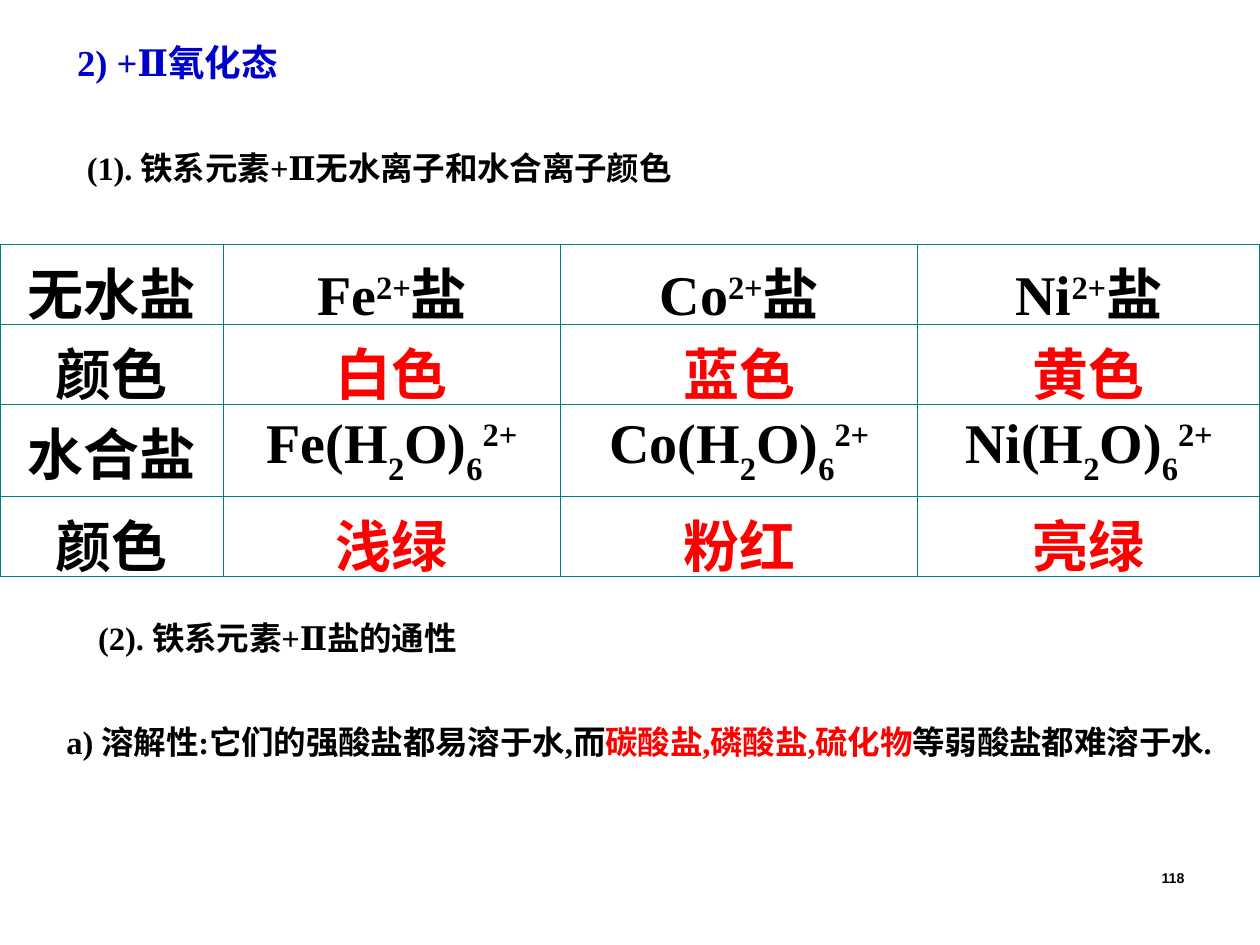
from typing import NamedTuple

from lxml.etree import SubElement
from pptx import Presentation
from pptx.dml.color import RGBColor
from pptx.enum.text import MSO_ANCHOR, MSO_AUTO_SIZE, PP_ALIGN
from pptx.oxml import parse_xml
from pptx.oxml.ns import nsdecls, qn
from pptx.util import Cm, Pt

BLACK = RGBColor(0x00, 0x00, 0x00)
BLUE = RGBColor(0x00, 0x00, 0xCC)
RED = RGBColor(0xFF, 0x00, 0x00)
TEAL = RGBColor(0x00, 0x80, 0x80)
WHITE = RGBColor(0xFF, 0xFF, 0xFF)
SERIF = "Times New Roman"
RAISE = 30
METALS = ("Fe", "Co", "Ni")


class Span(NamedTuple):
    text: str
    color: RGBColor = BLACK
    base: int = 0


class Box(NamedTuple):
    left: float
    top: float
    width: float
    height: float


class Note(NamedTuple):
    box: Box
    spans: list[Span]
    size: int = 32
    font: str = SERIF
    align: PP_ALIGN = PP_ALIGN.LEFT
    anchor: MSO_ANCHOR = MSO_ANCHOR.MIDDLE
    fit: MSO_AUTO_SIZE = MSO_AUTO_SIZE.SHAPE_TO_FIT_TEXT
    space: float = 1.0


def raised(text: str, color: RGBColor = BLACK) -> Span:
    return Span(text, color, RAISE)


NOTES = [
    Note(Box(1.5, 2.72, 21.2, 1.6), [raised("(1). 铁系元素+Ⅱ无水离子和水合离子颜色")]),
    Note(Box(1.73, 12.19, 13.36, 1.63), [raised("(2). 铁系元素+Ⅱ盐的通性")]),
    Note(
        Box(1.09, 14.17, 23.7, 3.23),
        [
            raised("a) 溶解性:它们的强酸盐都易溶于水,而"),
            raised("碳酸盐,磷酸盐,硫化物", RED),
            raised("等弱酸盐都难溶于水."),
        ],
        anchor=MSO_ANCHOR.TOP,
        space=1.1,
    ),
    Note(
        Box(18.21, 17.35, 5.92, 1.32),
        [raised("118")],
        size=14,
        font="Arial",
        align=PP_ALIGN.RIGHT,
        anchor=MSO_ANCHOR.TOP,
        fit=MSO_AUTO_SIZE.NONE,
    ),
]
TITLE = Note(Box(1.3, 0.53, 10.41, 1.78), [raised("2) +Ⅱ氧化态", BLUE)], size=36)

GRID = Box(0, 4.93, 25.4, 6.43)
WIDTHS = (4.5, 6.8, 7.2, 6.9)


def salt(metal: str) -> list[Span]:
    return [Span(metal), raised("2+"), Span("盐")]


def hydrate(metal: str) -> list[Span]:
    return [
        Span(f"{metal}(H"),
        Span("2", base=-RAISE),
        Span("O)"),
        Span("6", base=-RAISE),
        raised("2+"),
    ]


def tints(*names: str) -> list[list[Span]]:
    return [[Span("颜色")]] + [[Span(name, RED)] for name in names]


ROWS = [
    [[Span("无水盐")]] + [salt(metal) for metal in METALS],
    tints("白色", "蓝色", "黄色"),
    [[Span("水合盐")]] + [hydrate(metal) for metal in METALS],
    tints("浅绿", "粉红", "亮绿"),
]


def write(para, spans: list[Span], size: int, font: str, align: PP_ALIGN) -> None:
    para.alignment = align
    for span in spans:
        run = para.add_run()
        run.text = span.text
        run.font.size = Pt(size)
        run.font.name = font
        run.font.bold = True
        run.font.color.rgb = span.color
        if span.base:
            run.font._element.set("baseline", str(span.base * 1000))


def place(shape, note: Note) -> None:
    frame = shape.text_frame
    frame.word_wrap = True
    frame.auto_size = note.fit
    frame.vertical_anchor = note.anchor
    para = frame.paragraphs[0]
    para.line_spacing = note.space
    write(para, note.spans, note.size, note.font, note.align)
    box = note.box
    shape.left, shape.top = Cm(box.left), Cm(box.top)
    shape.width, shape.height = Cm(box.width), Cm(box.height)


def border(cell) -> None:
    props = cell._tc.get_or_add_tcPr()
    for spot, side in enumerate(("lnL", "lnR", "lnT", "lnB")):
        line = parse_xml(f'<a:{side} {nsdecls("a")} w="{Pt(0.75)}"/>')
        fill = SubElement(line, qn("a:solidFill"))
        SubElement(fill, qn("a:srgbClr")).set("val", str(TEAL))
        props.insert(spot, line)


def draw_grid(slide) -> None:
    frame = slide.shapes.add_table(len(ROWS), len(WIDTHS), *map(Cm, GRID))
    table = frame.table
    table.first_row = table.horz_banding = False
    for col, width in zip(table.columns, WIDTHS):
        col.width = Cm(width)
    for r, row in enumerate(ROWS):
        for c, spans in enumerate(row):
            cell = table.cell(r, c)
            cell.vertical_anchor = MSO_ANCHOR.MIDDLE
            cell.fill.solid()
            cell.fill.fore_color.rgb = WHITE
            border(cell)
            para = cell.text_frame.paragraphs[0]
            write(para, spans, 32, SERIF, PP_ALIGN.CENTER)
            props = para._p.get_or_add_pPr()
            props.set("marL", str(Cm(0.95)))
            props.set("indent", str(-Cm(0.95)))


def main() -> None:
    deck = Presentation()
    deck.slide_width, deck.slide_height = Cm(25.4), Cm(19.05)
    slide = deck.slides.add_slide(deck.slide_layouts[5])
    place(slide.shapes.title, TITLE)
    draw_grid(slide)
    for note in NOTES:
        place(slide.shapes.add_textbox(*map(Cm, note.box)), note)
    deck.save("out.pptx")


if __name__ == "__main__":
    main()
